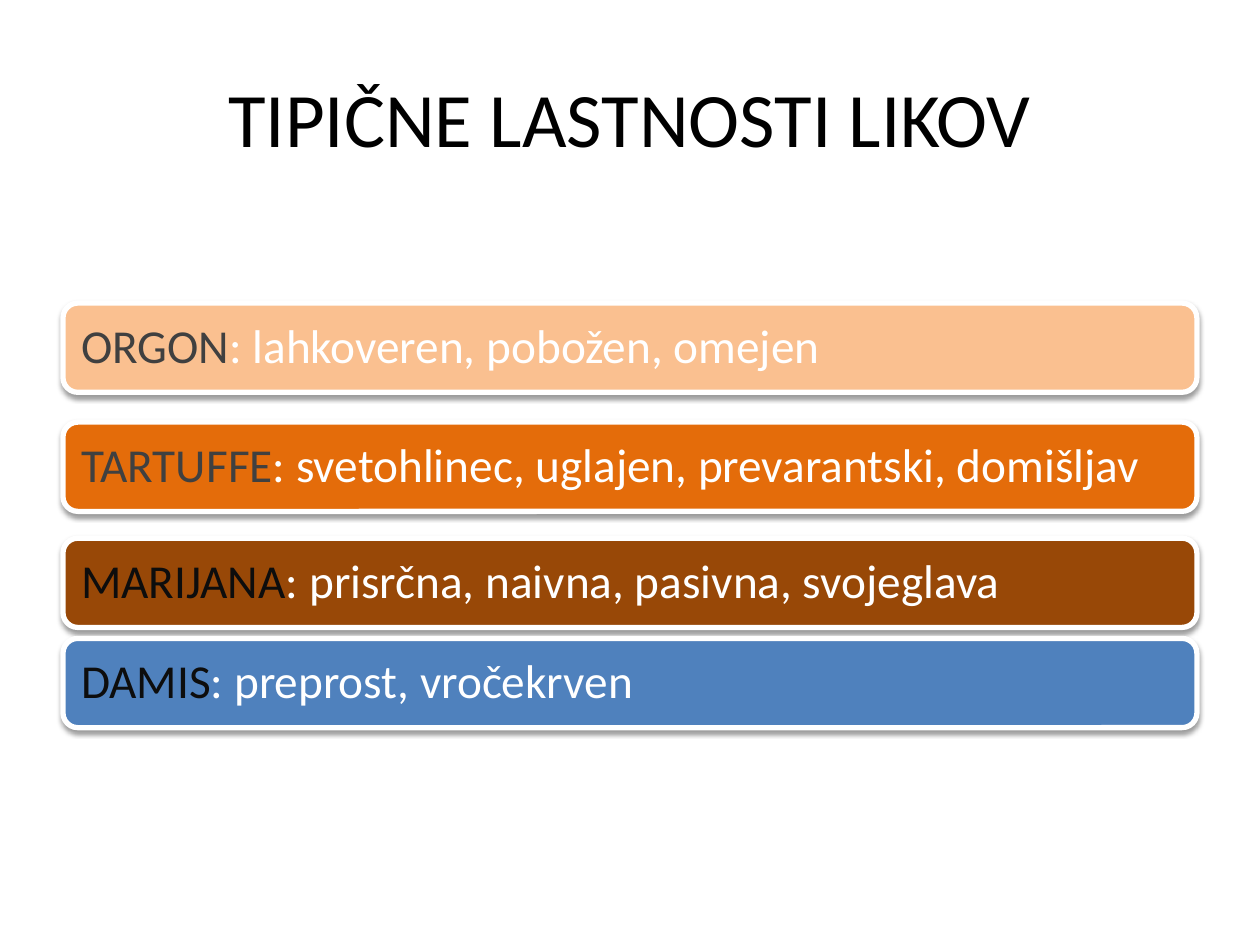
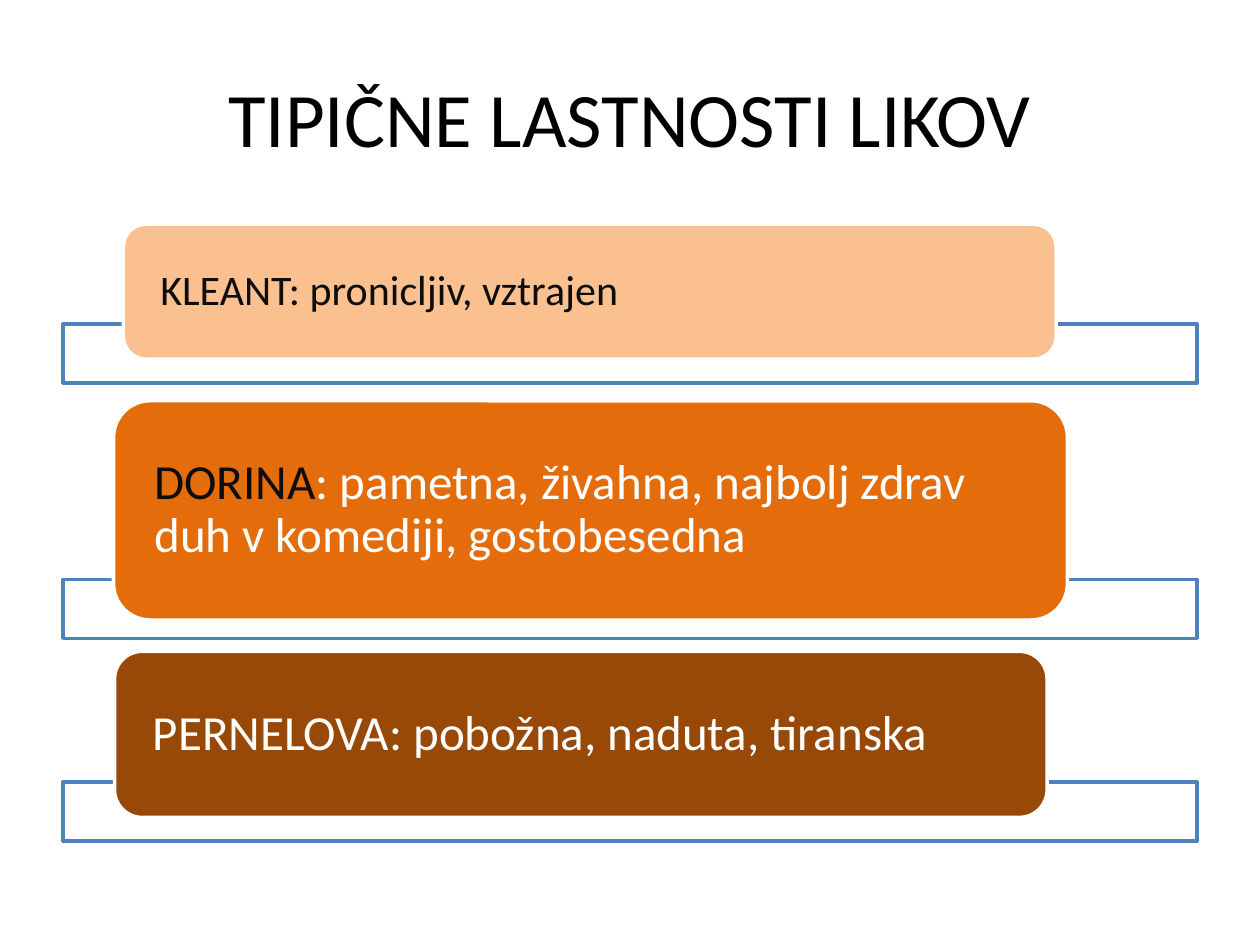
from dataclasses import dataclass

from lxml import etree
from pptx import Presentation
from pptx.dml.color import RGBColor
from pptx.enum.shapes import MSO_SHAPE as Shape
from pptx.enum.text import MSO_ANCHOR as Anchor, PP_ALIGN as Align
from pptx.oxml.ns import qn
from pptx.util import Cm, Pt

FONT = "Calibri"
TITLE = "TIPIČNE LASTNOSTI LIKOV"
LEFT, WIDTH = 1.27, 22.86
WHITE, BLACK, GREY, INK = "FFFFFF", "000000", "404040", "0D0D0D"
PEACH, ORANGE, BROWN, BLUE = "FAC090", "E46C0A", "984807", "4F81BD"
BAR_HEIGHT, BAR_INSET = 1.8, (0.28, 0.28)
FRAME_HEIGHT, CARD_INSET = 1.19, (0.61, 0)


@dataclass
class Run:
    text: str
    color: str = WHITE


@dataclass
class Bar:
    top: float
    fill: str
    runs: list[Run]


@dataclass
class Card:
    left: float
    top: float
    width: float
    height: float
    frame_top: float
    fill: str
    size: int
    runs: list[Run]


BARS = [
    Bar(6.11, PEACH, [Run("ORGON", GREY), Run(": lahkoveren, pobožen, omejen")]),
    Bar(8.51, ORANGE, [Run("TARTUFFE", GREY),
                       Run(": svetohlinec, uglajen, prevarantski, domišljav")]),
    Bar(10.85, BROWN, [Run("MARIJANA", INK),
                       Run(": prisrčna, naivna, pasivna, svojeglava")]),
    Bar(12.87, BLUE, [Run("DAMIS", INK), Run(": preprost, vročekrven")]),
]
CARDS = [
    Card(2.49, 4.52, 18.8, 2.72, 6.53, PEACH, 24,
         [Run("KLEANT: pronicljiv, vztrajen", INK)]),
    Card(2.29, 8.08, 19.23, 4.42, 11.68, ORANGE, 28,
         [Run("DORINA", INK),
          Run(": pametna, živahna, najbolj zdrav duh v komediji, gostobesedna")]),
    Card(2.31, 13.13, 18.8, 3.35, 15.77, BROWN, 28,
         [Run("PERNELOVA: pobožna, naduta, tiranska")]),
]


def rgb(color: str) -> RGBColor:
    return RGBColor.from_string(color)


def add_runs(p, runs: list[Run], size: int) -> None:
    for run in runs:
        r = p.add_run()
        r.text = run.text
        r.font.name, r.font.size = FONT, Pt(size)
        r.font.color.rgb = rgb(run.color)


def add_box(s, kind, left: float, top: float, width: float, height: float,
            fill: str, line: str, weight: float):
    sp = s.shapes.add_shape(kind, Cm(left), Cm(top), Cm(width), Cm(height))
    sp.shadow.inherit = False
    sp.fill.solid()
    sp.fill.fore_color.rgb = rgb(fill)
    sp.line.color.rgb = rgb(line)
    sp.line.width = Pt(weight)
    return sp


def write(sp, runs: list[Run], size: int, inset: tuple[float, float]) -> None:
    tf = sp.text_frame
    tf.word_wrap = True
    tf.vertical_anchor = Anchor.MIDDLE
    tf.margin_left = tf.margin_right = Cm(inset[0])
    tf.margin_top = tf.margin_bottom = Cm(inset[1])
    p = tf.paragraphs[0]
    p.alignment, p.line_spacing = Align.LEFT, 0.9
    add_runs(p, runs, size)


def add_shadow(sp) -> None:
    effects = sp._element.spPr.find(qn("a:effectLst"))
    shadow = etree.SubElement(effects, qn("a:outerShdw"), blurRad=str(Pt(3.1)),
                              dist=str(Pt(1.6)), dir="5400000", rotWithShape="0")
    color = etree.SubElement(shadow, qn("a:srgbClr"), val=BLACK)
    etree.SubElement(color, qn("a:alpha"), val="38000")


def add_bar(s, bar: Bar) -> None:
    sp = add_box(s, Shape.ROUNDED_RECTANGLE, LEFT, bar.top, WIDTH, BAR_HEIGHT,
                 bar.fill, WHITE, 3)
    add_shadow(sp)
    write(sp, bar.runs, 27, BAR_INSET)


def add_card(s, card: Card) -> None:
    frame = add_box(s, Shape.RECTANGLE, LEFT, card.frame_top, WIDTH, FRAME_HEIGHT,
                    WHITE, BLUE, 2)
    color = frame._element.spPr.find(qn("a:solidFill"))[0]
    etree.SubElement(color, qn("a:alpha"), val="90000")
    sp = add_box(s, Shape.ROUNDED_RECTANGLE, card.left, card.top, card.width,
                 card.height, card.fill, WHITE, 2)
    write(sp, card.runs, card.size, CARD_INSET)


def add_titled_slide(prs):
    s = prs.slides.add_slide(prs.slide_layouts[5])
    title = s.shapes.title
    title.left, title.top = Cm(LEFT), Cm(0.76)
    title.width, title.height = Cm(WIDTH), Cm(3.18)
    tf = title.text_frame
    tf.vertical_anchor = Anchor.MIDDLE
    p = tf.paragraphs[0]
    p.alignment = Align.CENTER
    add_runs(p, [Run(TITLE, BLACK)], 44)
    return s


def main() -> None:
    """Build the two slides on the characters' typical traits."""
    prs = Presentation()
    prs.slide_width, prs.slide_height = Cm(25.4), Cm(19.05)
    s = add_titled_slide(prs)
    for bar in BARS:
        add_bar(s, bar)
    s = add_titled_slide(prs)
    for card in CARDS:
        add_card(s, card)
    prs.save("out.pptx")


if __name__ == "__main__":
    main()
